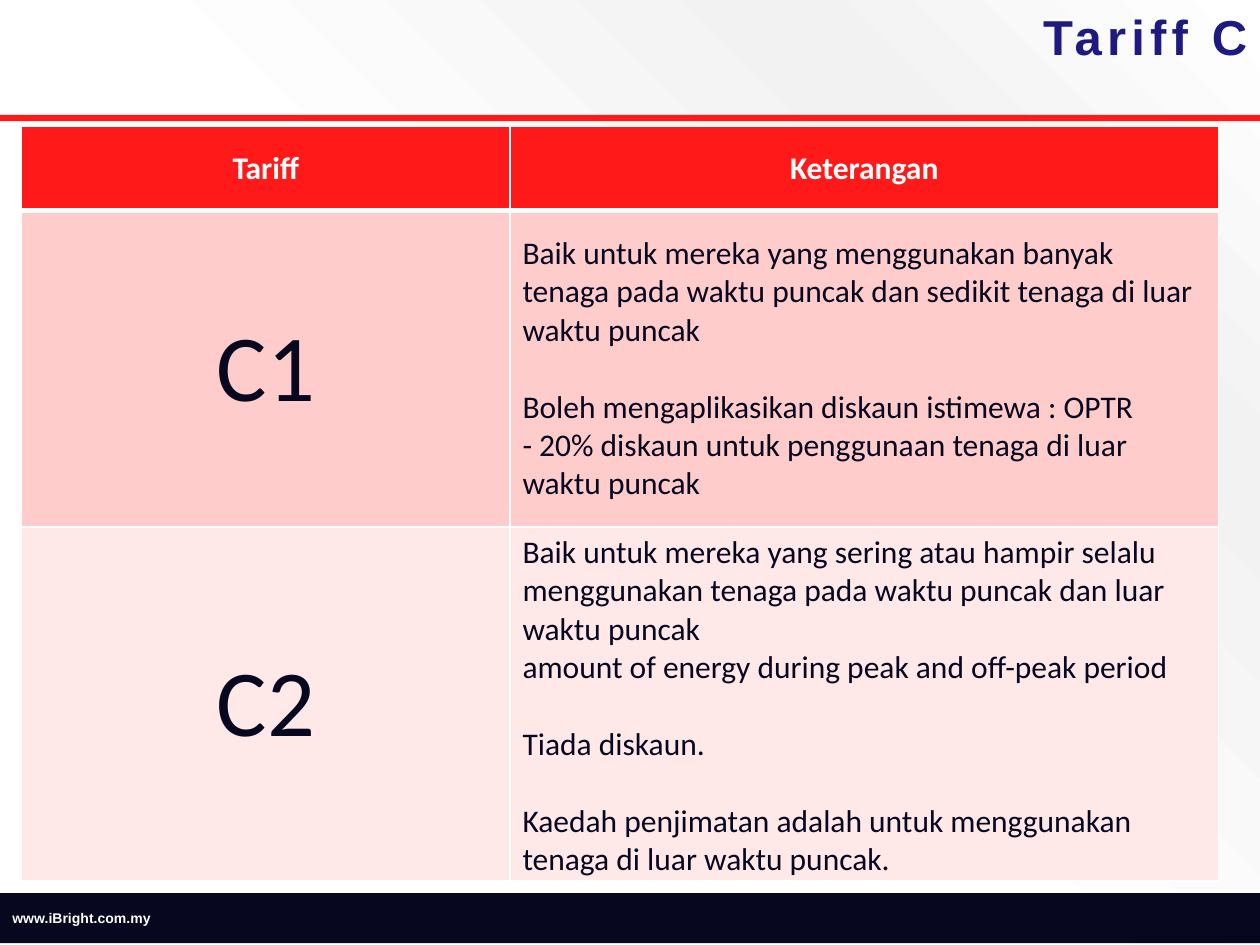
import lxml.etree
import pptx
import pptx.dml.color
import pptx.enum.shapes
import pptx.enum.text
import pptx.oxml
import pptx.oxml.ns
import pptx.util

Pt = pptx.util.Pt
RGB = pptx.dml.color.RGBColor.from_string
ALIGN = pptx.enum.text.PP_ALIGN
MIDDLE = pptx.enum.text.MSO_ANCHOR.MIDDLE
RECTANGLE = pptx.enum.shapes.MSO_SHAPE.RECTANGLE
COLORS = {"red": "FF1919", "navy": "080720", "title": "1E1B80", "white": "FFFFFF",
          "pink": "FFCCCC", "pale": "FFE8E8", "grey": "F2F2F2"}


def write(paragraph, text, color, align=ALIGN.LEFT, **font_values):
    """Fill a paragraph with one run and set its font from the given values."""
    paragraph.alignment = align
    run = paragraph.add_run()
    run.text = text
    run.font.color.rgb = RGB(COLORS[color])
    for attribute, value in font_values.items():
        setattr(run.font, attribute, value)
    return run


def border_cell(cell, bottom_width):
    properties = cell._tc.get_or_add_tcPr()
    widths = {"lnL": 1, "lnR": 1, "lnT": 1, "lnB": bottom_width}
    for position, (side, width) in enumerate(widths.items()):
        properties.insert(position, pptx.oxml.parse_xml(
            f'<a:{side} {pptx.oxml.ns.nsdecls("a")} w="{Pt(width)}"><a:solidFill>'
            f'<a:srgbClr val="{COLORS["white"]}"/></a:solidFill></a:{side}>'))


prs = pptx.Presentation()
prs.slide_width, prs.slide_height = Pt(720), Pt(540)
slide = prs.slides.add_slide(prs.slide_layouts[6])

# Background: gradient spreading from the top right corner
slide.background.fill.gradient()
gradient = slide._element.cSld.find(".//" + pptx.oxml.ns.qn("a:gradFill"))
for child in list(gradient):
    gradient.remove(child)
stops = lxml.etree.SubElement(gradient, pptx.oxml.ns.qn("a:gsLst"))
for percent, color in [(0, "white"), (22, "grey"), (53, "white"), (82, "white")]:
    stop = lxml.etree.SubElement(stops, pptx.oxml.ns.qn("a:gs"), pos=str(percent * 1000))
    lxml.etree.SubElement(stop, pptx.oxml.ns.qn("a:srgbClr"), val=COLORS[color])
spread = lxml.etree.SubElement(gradient, pptx.oxml.ns.qn("a:path"), path="circle")
lxml.etree.SubElement(spread, pptx.oxml.ns.qn("a:fillToRect"), l="100000", b="100000")

# Title rule and footer bar
bars = []
for top, height, color in [(65.6, 3.7, "red"), (510.4, 28.6, "navy")]:
    bar = slide.shapes.add_shape(RECTANGLE, 0, Pt(top), Pt(720), Pt(height))
    bar.shadow.inherit = False
    bar.fill.solid()
    bar.fill.fore_color.rgb = RGB(COLORS[color])
    bar.line.fill.background()
    bars.append(bar)
footer = bars[1].text_frame
footer.vertical_anchor = MIDDLE
write(footer.paragraphs[0], "www.iBright.com.my", "white", name="Arial", size=Pt(8), bold=True)

title = slide.shapes.add_textbox(Pt(72), Pt(3.6), Pt(648), Pt(38)).text_frame
title.word_wrap = True
title.vertical_anchor = MIDDLE
title.paragraphs[0].line_spacing = 0.9
heading = write(title.paragraphs[0], "Tariff C", "title", ALIGN.RIGHT,
                name="Arial", size=Pt(28), bold=True)
heading.font._element.set("spc", "300")

# Tariff table: each description is a list of (gap before in points, text)
header_style = {"color": "white", "align": ALIGN.CENTER, "size": Pt(18), "bold": True}
code_style = {"color": "navy", "align": ALIGN.CENTER, "size": Pt(54), "bold": False}
body_style = {"color": "navy", "size": Pt(18), "bold": False}
GAP = 22
c1_notes = [
    (0, "Baik untuk mereka yang menggunakan banyak tenaga pada waktu puncak "
        "dan sedikit tenaga di luar waktu puncak"),
    (GAP, "Boleh mengaplikasikan diskaun istimewa : OPTR"),
    (0, "- 20% diskaun untuk penggunaan tenaga di luar waktu puncak"),
]
c2_notes = [
    (0, "Baik untuk mereka yang sering atau hampir selalu menggunakan tenaga "
        "pada waktu puncak dan luar waktu puncak"),
    (0, "amount of energy during peak and off-peak period"),
    (GAP, "Tiada diskaun."),
    (GAP, "Kaedah penjimatan adalah untuk menggunakan tenaga di luar waktu puncak."),
]
rows = [
    (48.2, "red", 3, [([(0, "Tariff")], header_style), ([(0, "Keterangan")], header_style)]),
    (180.7, "pink", 1, [([(0, "C1")], code_style), (c1_notes, body_style)]),
    (180.7, "pale", 1, [([(0, "C2")], code_style), (c2_notes, body_style)]),
]
tariffs = slide.shapes.add_table(3, 2, Pt(12.4), Pt(72.2), Pt(684), Pt(409.6)).table
for column, width in zip(tariffs.columns, (279, 405)):
    column.width = Pt(width)
for row, (height, fill, bottom_width, contents) in zip(tariffs.rows, rows):
    row.height = Pt(height)
    for cell, (lines, style) in zip(row.cells, contents):
        cell.fill.solid()
        cell.fill.fore_color.rgb = RGB(COLORS[fill])
        cell.vertical_anchor = MIDDLE
        border_cell(cell, bottom_width)
        for index, (gap, text) in enumerate(lines):
            frame = cell.text_frame
            paragraph = frame.add_paragraph() if index else frame.paragraphs[0]
            if gap:
                paragraph.space_before = Pt(gap)
            write(paragraph, text, name="Calibri", **style)

prs.save("out.pptx")
